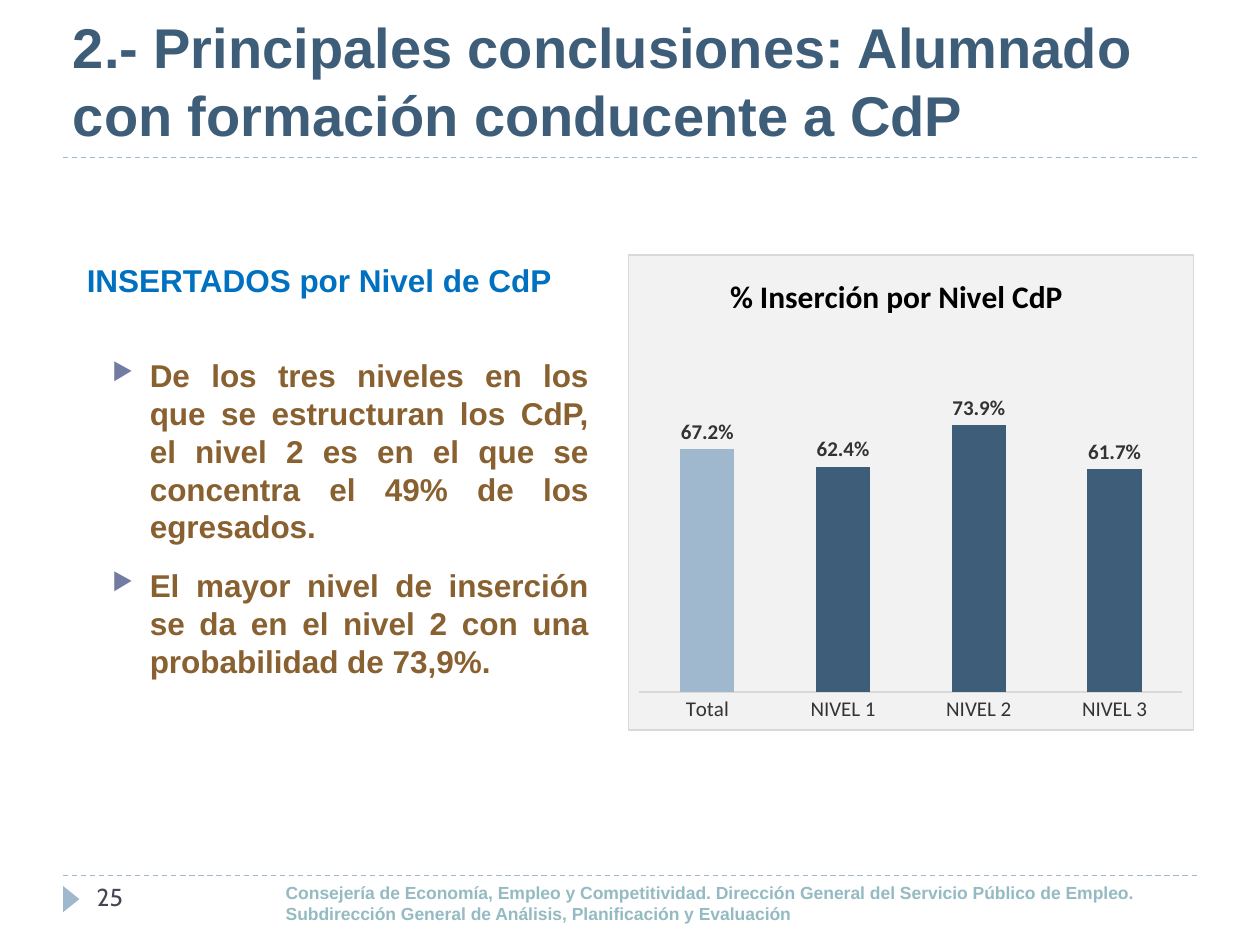
from lxml.etree import SubElement, fromstring
from pptx import Presentation
from pptx.chart.data import CategoryChartData
from pptx.dml.color import RGBColor
from pptx.enum.chart import XL_CHART_TYPE, XL_LABEL_POSITION, XL_TICK_MARK
from pptx.enum.dml import MSO_LINE
from pptx.enum.shapes import MSO_CONNECTOR, MSO_SHAPE
from pptx.enum.text import MSO_ANCHOR, PP_ALIGN
from pptx.oxml.ns import nsdecls, qn
from pptx.util import Cm, Pt

INK = {
    "navy": "3E5D78", "pale": "9FB8CD", "blue": "0070C0", "brown": "89602F",
    "teal": "94BAC3", "slate": "464653", "mark": "727CA3", "text": "333333",
    "edge": "D9D9D9", "panel": "F2F2F2", "black": "000000",
}
RGB = {name: RGBColor.from_string(code) for name, code in INK.items()}


def write(frame, text, first=False, size=18, font="Arial", color="navy", bold=True,
          align=PP_ALIGN.LEFT, before=0, after=0, bullet=False):
    par = frame.paragraphs[0] if first else frame.add_paragraph()
    par.alignment = align
    par.space_before, par.space_after = Pt(before), Pt(after)
    if bullet:
        props = par._p.get_or_add_pPr()
        props.set("marL", str(Cm(1.27)))
        props.set("indent", str(Cm(-0.76)))
        SubElement(SubElement(props, qn("a:buClr")), qn("a:srgbClr"), val=INK["mark"])
        SubElement(props, qn("a:buSzPct"), val="76000")
        SubElement(props, qn("a:buChar"), char="▶")
    run = par.add_run()
    run.text = text
    run.font.size, run.font.name, run.font.bold = Pt(size), font, bold
    run.font.color.rgb = RGB[color]


def layout(part, index, **sizes):
    for old in part.findall(qn("c:layout")):
        part.remove(old)
    node = fromstring(f"<c:layout {nsdecls('c')}><c:manualLayout/></c:layout>")
    for tag, val in sizes.items():
        SubElement(node[0], qn("c:" + tag), val=str(val))
    part.insert(index, node)


deck = Presentation()
deck.slide_width, deck.slide_height = Cm(25.4), Cm(19.05)
slide = deck.slides.add_slide(deck.slide_layouts[6])
shapes = slide.shapes

for top in (17.65, 3.18):
    rule = shapes.add_connector(MSO_CONNECTOR.STRAIGHT, Cm(1.27), Cm(top), Cm(24.13), Cm(top))
    rule.line.color.rgb = RGB["pale"]
    rule.line.width = Pt(0.75)
    rule.line.dash_style = MSO_LINE.DASH
    SubElement(rule._element.spPr, qn("a:effectLst"))

arrow = shapes.add_shape(MSO_SHAPE.ISOSCELES_TRIANGLE, Cm(1.17), Cm(17.96), Cm(0.53), Cm(0.33))
arrow.rotation = 90
arrow.shadow.inherit = False
arrow.fill.solid()
arrow.fill.fore_color.rgb = RGB["pale"]
arrow.line.fill.background()

frames = {}
for name, left, top, width, height, anchor in (
    ("foot", 5.51, 17.65, 18.31, 1.12, MSO_ANCHOR.TOP),
    ("page", 1.7, 17.65, 5.51, 1.02, MSO_ANCHOR.TOP),
    ("title", 1.22, -0.05, 22.86, 3.33, MSO_ANCHOR.MIDDLE),
    ("body", 1.5, 5.13, 10.62, 8.69, MSO_ANCHOR.TOP),
):
    frame = shapes.add_textbox(Cm(left), Cm(top), Cm(width), Cm(height)).text_frame
    frame.word_wrap = True
    frame.vertical_anchor = anchor
    frames[name] = frame

foot = dict(size=10, color="teal")
write(frames["foot"], "Consejería de Economía, Empleo y Competitividad. Dirección General "
      "del Servicio Público de Empleo.", first=True, **foot)
write(frames["foot"], "Subdirección General de Análisis, Planificación y Evaluación", **foot)
write(frames["page"], "25", first=True, size=14, font="Cabin", color="slate", bold=False)
write(frames["title"], "2.- Principales conclusiones: Alumnado con formación conducente a CdP",
      first=True, size=32)
write(frames["body"], "INSERTADOS por Nivel de CdP", first=True, color="blue", after=27)
for text in (
    "De los tres niveles en los que se estructuran los CdP, el nivel 2 es en el que "
    "se concentra el 49% de los egresados.",
    "El mayor nivel de inserción se da en el nivel 2 con una probabilidad de 73,9%.",
):
    write(frames["body"], text, color="brown", align=PP_ALIGN.JUSTIFY,
          before=6, after=6, bullet=True)

data = CategoryChartData(number_format="0.0%")
data.categories = ["Total", "NIVEL 1", "NIVEL 2", "NIVEL 3"]
data.add_series("Inserción", (0.672, 0.624, 0.739, 0.617))
chart = shapes.add_chart(XL_CHART_TYPE.COLUMN_CLUSTERED, Cm(12.65), Cm(5.13),
                         Cm(11.43), Cm(9.6), data).chart
chart.has_legend = False
chart.font.size, chart.font.name = Pt(10), "Calibri"
chart.font.color.rgb = RGB["black"]

write(chart.chart_title.text_frame, "% Inserción por Nivel CdP", first=True,
      font="Calibri", color="black")
title = chart.chart_title._element
layout(title, 1, xMode="edge", yMode="edge", x=0.17, y=0.03)
for old in title.findall(qn("c:overlay")):
    title.remove(old)
title[1].addnext(fromstring(f'<c:overlay {nsdecls("c")} val="1"/>'))
layout(chart._chartSpace.chart.plotArea, 0, layoutTarget="inner", xMode="edge", yMode="edge",
       x=0.02, y=0.16, w=0.96, h=0.76)
chart._chartSpace.chart.addnext(fromstring(
    f'<c:spPr {nsdecls("c", "a")}><a:solidFill><a:srgbClr val="{INK["panel"]}"/></a:solidFill>'
    f'<a:ln w="{Pt(0.75)}"><a:solidFill><a:srgbClr val="{INK["edge"]}"/></a:solidFill></a:ln>'
    '</c:spPr>'))

base = chart.category_axis
base.major_tick_mark = XL_TICK_MARK.NONE
base.format.line.color.rgb = RGB["edge"]
base.format.line.width = Pt(0.75)
scale = chart.value_axis
scale.minimum_scale, scale.maximum_scale = 0, 1
scale.has_major_gridlines = False
scale.visible = False

plot = chart.plots[0]
plot.gap_width, plot.overlap = 150, -25
plot.vary_by_categories = False
plot.has_data_labels = True
tags = plot.data_labels
tags.show_value = True
tags.position = XL_LABEL_POSITION.OUTSIDE_END
tags.number_format, tags.number_format_is_linked = "0.0%", False
tags.font.bold = True
for font in (base.tick_labels.font, tags.font):
    font.size, font.name = Pt(12), "Calibri"
    font.color.rgb = RGB["text"]
for i, color in enumerate(("pale", "navy", "navy", "navy")):
    fill = plot.series[0].points[i].format.fill
    fill.solid()
    fill.fore_color.rgb = RGB[color]

deck.save("out.pptx")
